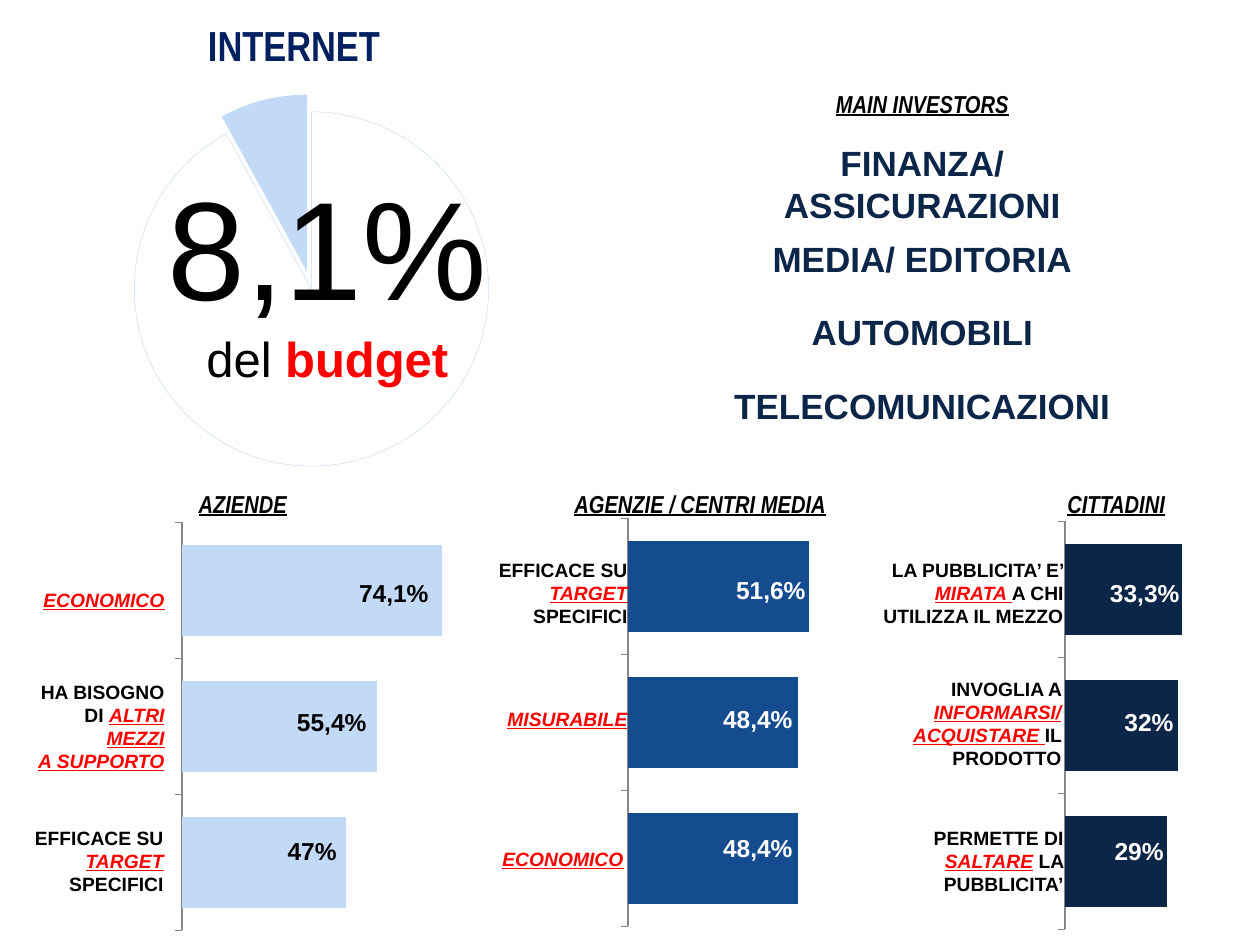
from lxml import etree
from pptx import Presentation
from pptx.chart.data import CategoryChartData
from pptx.dml.color import RGBColor
from pptx.enum.chart import XL_CHART_TYPE, XL_TICK_LABEL_POSITION, XL_TICK_MARK
from pptx.enum.text import MSO_AUTO_SIZE, PP_ALIGN
from pptx.oxml.ns import qn
from pptx.util import Pt

PX = 914400 / 126
LEFT, CENTER, RIGHT = PP_ALIGN.LEFT, PP_ALIGN.CENTER, PP_ALIGN.RIGHT
PIE, BAR = XL_CHART_TYPE.PIE, XL_CHART_TYPE.BAR_CLUSTERED
NO_LABELS = XL_TICK_LABEL_POSITION.NONE
TICK_OUT, TICK_NONE = XL_TICK_MARK.OUTSIDE, XL_TICK_MARK.NONE
GROW = MSO_AUTO_SIZE.SHAPE_TO_FIT_TEXT

BLACK = RGBColor(0x00, 0x00, 0x00)
WHITE = RGBColor(0xFF, 0xFF, 0xFF)
RED = RGBColor(0xFF, 0x00, 0x00)
TITLE_BLUE = RGBColor(0x00, 0x20, 0x60)
PALE_BLUE = RGBColor(0xC3, 0xDA, 0xF6)
MID_BLUE = RGBColor(0x15, 0x4C, 0x8F)
NAVY = RGBColor(0x0B, 0x26, 0x48)
SLATE = RGBColor(0x53, 0x61, 0x6A)
AXIS_GRAY = RGBColor(0x86, 0x86, 0x86)

deck = Presentation()
deck.slide_width, deck.slide_height = round(1260 * PX), round(945 * PX)
page = deck.slides.add_slide(deck.slide_layouts[6])


def write(text, area=None, frame=None, size=11, font="Arial", color=BLACK, bold=True,
          slanted=False, align=CENTER, inset=13, slanted_accent=True):
    """Write one paragraph; *starred* words are red, line feeds are line breaks."""
    if frame is None:
        box = page.shapes.add_textbox(*[round(length * PX) for length in area])
        frame = box.text_frame
        frame.word_wrap = True
        frame.auto_size = GROW
        frame.margin_left = round(inset * PX)
        para = frame.paragraphs[0]
    else:
        para = frame.add_paragraph()
    para.alignment = align
    for index, part in enumerate(text.split("*")):
        accent = index % 2 == 1
        for number, line in enumerate(part.split("\n")):
            if number:
                para.add_line_break()
            if not line:
                continue
            span = para.add_run()
            span.text = line
            style = span.font
            style.size, style.name = Pt(size), font
            style.bold = bold or accent
            style.italic = style.underline = slanted_accent if accent else slanted
            style.color.rgb = RED if accent else color
    return frame


def add_chart(kind, area, values, plot):
    """Add a one-series chart whose inner plot fills the given fractions."""
    data = CategoryChartData()
    data.categories = [str(number + 1) for number in range(len(values))]
    data.add_series("Series 1", values)
    lengths = [round(length * PX) for length in area]
    chart = page.shapes.add_chart(kind, *lengths, data).chart
    chart.has_legend = chart.has_title = False
    chart.font.size, chart.font.name = Pt(18), "Arial"
    chart.font.color.rgb = SLATE
    plot_area = chart.plots[0]._element.getparent()
    for old in plot_area.findall(qn("c:layout")):
        plot_area.remove(old)
    layout = etree.Element(qn("c:layout"))
    manual = etree.SubElement(layout, qn("c:manualLayout"))
    settings = [("layoutTarget", "inner"), ("xMode", "edge"), ("yMode", "edge")]
    for tag, value in settings + list(zip("xywh", plot)):
        etree.SubElement(manual, qn("c:" + tag)).set("val", str(value))
    plot_area.insert(0, layout)
    return chart


# Title
write("INTERNET", (50, 13, 1099, 63), size=24, font="Arial Narrow",
      color=TITLE_BLUE, align=LEFT, inset=158)

# Budget share pie
pie = add_chart(PIE, (5, 66, 607, 417), (92, 8), (0.21, 0.11, 0.59, 0.85))
pie.plots[0].vary_by_categories = False
rest, share = [pie.plots[0].series[0].points[index] for index in range(2)]
rest.format.fill.background()
rest.format.line.color.rgb = PALE_BLUE
rest.format.line.width = Pt(0.25)
share.format.fill.solid()
share.format.fill.fore_color.rgb = PALE_BLUE
share.format.line.fill.background()
slice_xml = share.format._element if hasattr(share.format, "_element") else None
for point in pie.plots[0].series[0]._element.findall(qn("c:dPt")):
    if point.find(qn("c:idx")).get("val") == "1":
        explosion = etree.Element(qn("c:explosion"))
        explosion.set("val", "10")
        point.find(qn("c:spPr")).addprevious(explosion)

budget = write("8,1%", (55, 154, 544, 242), size=80, bold=False)
write("del *budget*", frame=budget, size=28, bold=False, slanted_accent=False)

# Main investors
for text, top, height in [
    ("FINANZA/\nASSICURAZIONI", 135, 97),
    ("MEDIA/ EDITORIA", 231, 55),
    ("AUTOMOBILI", 304, 55),
    ("TELECOMUNICAZIONI", 378, 55),
]:
    write(text, (650, top, 544, height), size=20, color=NAVY)

# Section headings
for text, left, top, width in [
    ("MAIN INVESTORS", 684, 83, 476),
    ("AZIENDE", 54, 483, 377),
    ("AGENZIE / CENTRI MEDIA", 462, 483, 476),
    ("CITTADINI", 878, 483, 476),
]:
    write(text, (left, top, width, 43), size=14, font="Arial Narrow", slanted=True)

# Bar panels: chart place, values, axis maximum, colours, first figure top,
# then per bar: reason, its area, figure, figure left
panels = [
    (174, 514, (100, 75, 63), 135, PALE_BLUE, BLACK, 572, [
        ("*ECONOMICO*", (13, 582, 164, 37), "74,1%", 335),
        ("HA BISOGNO DI *ALTRI MEZZI\nA SUPPORTO*", (13, 674, 164, 108), "55,4%", 273),
        ("EFFICACE SU *TARGET* SPECIFICI", (-8, 820, 184, 84), "47%", 243),
    ]),
    (620, 510, (100, 94, 94), 194, MID_BLUE, WHITE, 569, [
        ("EFFICACE SU *TARGET* SPECIFICI", (445, 552, 195, 84), "51,6%", 712),
        ("*MISURABILE*", (465, 701, 175, 37), "48,4%", 699),
        ("*ECONOMICO*", (441, 841, 195, 37), "48,4%", 699),
    ]),
    (1057, 513, (100, 96, 87), 300, NAVY, WHITE, 572, [
        ("LA PUBBLICITA’ E’ *MIRATA *A CHI UTILIZZA IL MEZZO", (858, 552, 218, 84),
         "33,3%", 1086),
        ("INVOGLIA A *INFORMARSI/ ACQUISTARE *IL PRODOTTO", (858, 671, 216, 108),
         "32%", 1080),
        ("PERMETTE DI *SALTARE* LA PUBBLICITA’", (838, 820, 238, 84), "29%", 1070),
    ]),
]
for left, top, values, maximum, fill, ink, figure_top, rows in panels:
    chart = add_chart(BAR, (left, top, 367, 425), values, (0.02, 0.02, 0.96, 0.96))
    bars = chart.plots[0]
    bars.gap_width = 50
    bars.vary_by_categories = False
    bars.series[0].format.fill.solid()
    bars.series[0].format.fill.fore_color.rgb = fill
    reasons, scale = chart.category_axis, chart.value_axis
    for axis in (reasons, scale):
        axis.tick_label_position = NO_LABELS
        axis.major_tick_mark, axis.minor_tick_mark = TICK_OUT, TICK_NONE
        axis.has_major_gridlines = False
    reasons.reverse_order = True
    reasons.tick_labels.font.size = Pt(11)
    reasons.format.line.color.rgb = AXIS_GRAY
    scale.minimum_scale, scale.maximum_scale = 0, maximum
    scale.tick_labels.number_format = "#,##0.0%"
    scale.tick_labels.number_format_is_linked = False
    scale.format.line.fill.background()
    for index, (reason, area, figure, figure_left) in enumerate(rows):
        write(reason, area, align=RIGHT)
        write(figure, (figure_left, figure_top + index * 129, 106, 43),
              size=14, color=ink, align=RIGHT)

deck.save("out.pptx")
